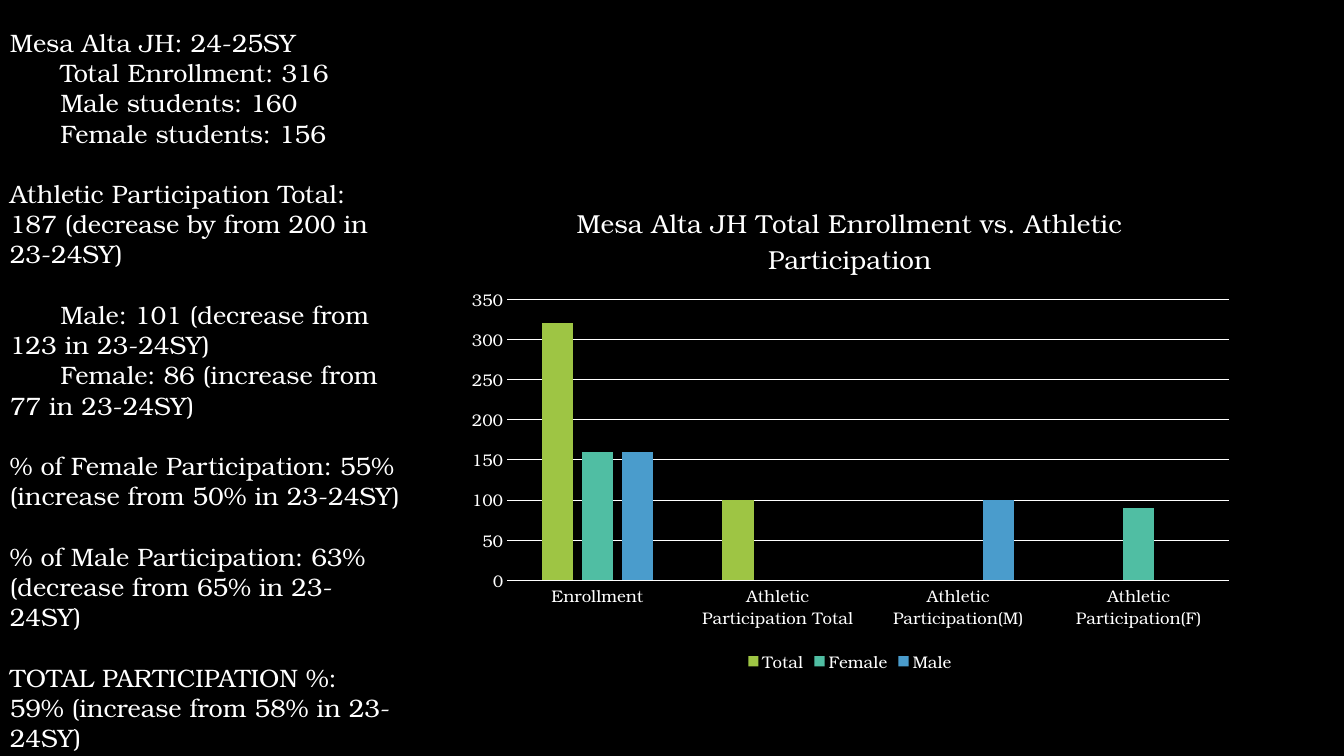
from dataclasses import dataclass

from lxml.etree import SubElement
from pptx import Presentation
from pptx.chart.data import CategoryChartData
from pptx.dml.color import RGBColor
from pptx.enum.chart import XL_CHART_TYPE, XL_LEGEND_POSITION, XL_TICK_MARK
from pptx.oxml.ns import qn
from pptx.util import Inches, Pt


@dataclass(frozen=True)
class Theme:
    font: str = "TeX Gyre Bonum"
    background: RGBColor = RGBColor(0x00, 0x00, 0x00)
    ink: RGBColor = RGBColor(0xFF, 0xFF, 0xFF)
    total: RGBColor = RGBColor(0x9E, 0xC5, 0x44)
    female: RGBColor = RGBColor(0x50, 0xBE, 0xA3)
    male: RGBColor = RGBColor(0x4A, 0x9C, 0xCC)
    body: Pt = Pt(18)
    chart_title: Pt = Pt(18.6)
    label: Pt = Pt(12)
    rule: Pt = Pt(0.75)
    group_gap: Pt = Pt(21.6)


THEME = Theme()

FACT_GROUPS = [
    [("Mesa Alta JH: 24-25SY", False),
     ("Total Enrollment: 316", True),
     ("Male students: 160", True),
     ("Female students: 156", True)],
    [("Athletic Participation Total:\v187 (decrease by from 200 in 23-24SY)", False)],
    [("Male: 101 (decrease from 123 in 23-24SY)", True),
     ("Female: 86 (increase from 77 in 23-24SY)", True)],
    [("% of Female Participation: 55% (increase from 50% in 23-24SY)", False)],
    [("% of Male Participation: 63% (decrease from 65% in 23-24SY)", False)],
    [("TOTAL PARTICIPATION %:", False),
     ("59% (increase from 58% in 23-24SY)", False)],
]

CHART_TITLE = "Mesa Alta JH Total Enrollment vs. Athletic Participation"
CATEGORIES = ["Enrollment", "Athletic Participation Total",
              "Athletic Participation(M)", "Athletic Participation(F)"]
SERIES = [
    ("Total", (320, 100, None, None), THEME.total),
    ("Female", (160, None, None, 90), THEME.female),
    ("Male", (160, None, 100, None), THEME.male),
]


def style_font(font, size):
    font.name = THEME.font
    font.size = size
    font.bold = False
    font.color.rgb = THEME.ink


def style_line(line):
    line.color.rgb = THEME.ink
    line.width = THEME.rule


def add_facts(slide, left, top, width, height):
    tf = slide.shapes.add_textbox(left, top, width, height).text_frame
    tf.word_wrap = True
    p = tf.paragraphs[0]
    for group_index, group in enumerate(FACT_GROUPS):
        for line_index, (text, indented) in enumerate(group):
            if group_index or line_index:
                p = tf.add_paragraph()
            p.text = text
            for r in p.runs:
                style_font(r.font, THEME.body)
            if group_index and not line_index:
                p.space_before = THEME.group_gap
            if indented:
                pPr = p._p.get_or_add_pPr()
                pPr.set("marL", "0")
                pPr.set("indent", str(Inches(0.5)))


def set_plot_layout(chart, x, y, w, h):
    plot_area = chart._chartSpace.chart.plotArea
    old = plot_area.find(qn("c:layout"))
    if old is not None:
        plot_area.remove(old)
    layout = SubElement(plot_area, qn("c:layout"))
    plot_area.insert(0, layout)
    manual = SubElement(layout, qn("c:manualLayout"))
    settings = [("layoutTarget", "inner"), ("xMode", "edge"), ("yMode", "edge"),
                ("x", x), ("y", y), ("w", w), ("h", h)]
    for name, value in settings:
        SubElement(manual, qn(f"c:{name}")).set("val", str(value))


def style_axes(chart):
    for axis in (chart.category_axis, chart.value_axis):
        axis.major_tick_mark = XL_TICK_MARK.NONE
        axis.minor_tick_mark = XL_TICK_MARK.NONE
        style_font(axis.tick_labels.font, THEME.label)
    style_line(chart.category_axis.format.line)
    values = chart.value_axis
    values.minimum_scale = 0
    values.maximum_scale = 350
    values.major_unit = 50
    values.format.line.fill.background()
    values.has_major_gridlines = True
    style_line(values.major_gridlines.format.line)


def add_participation_chart(slide, left, top, width, height):
    data = CategoryChartData()
    data.categories = CATEGORIES
    for name, values, _ in SERIES:
        data.add_series(name, values)
    chart = slide.shapes.add_chart(
        XL_CHART_TYPE.COLUMN_CLUSTERED, left, top, width, height, data).chart
    style_font(chart.font, THEME.label)

    chart.has_title = True
    p = chart.chart_title.text_frame.paragraphs[0]
    p.text = CHART_TITLE
    style_font(p.runs[0].font, THEME.chart_title)
    chart.chart_title.include_in_layout = False

    chart.has_legend = True
    chart.legend.position = XL_LEGEND_POSITION.BOTTOM
    chart.legend.include_in_layout = False
    style_font(chart.legend.font, THEME.label)

    plot = chart.plots[0]
    plot.gap_width = 219
    plot.overlap = -27
    plot.vary_by_categories = False
    for series, (_, _, color) in zip(plot.series, SERIES):
        series.invert_if_negative = False
        series.format.fill.solid()
        series.format.fill.fore_color.rgb = color
    style_axes(chart)
    set_plot_layout(chart, Inches(0.51) / width, Inches(1.16) / height,
                    Inches(7.16) / width, Inches(2.79) / height)


def main():
    prs = Presentation()
    prs.slide_width = Inches(13.33)
    prs.slide_height = Inches(7.5)
    slide = prs.slides.add_slide(prs.slide_layouts[6])
    slide.background.fill.solid()
    slide.background.fill.fore_color.rgb = THEME.background
    add_facts(slide, Inches(0), Inches(0.22), Inches(4.07), Inches(7.67))
    add_participation_chart(
        slide, Inches(4.52), Inches(1.81), Inches(7.82), Inches(4.9))
    prs.save("out.pptx")


if __name__ == "__main__":
    main()
